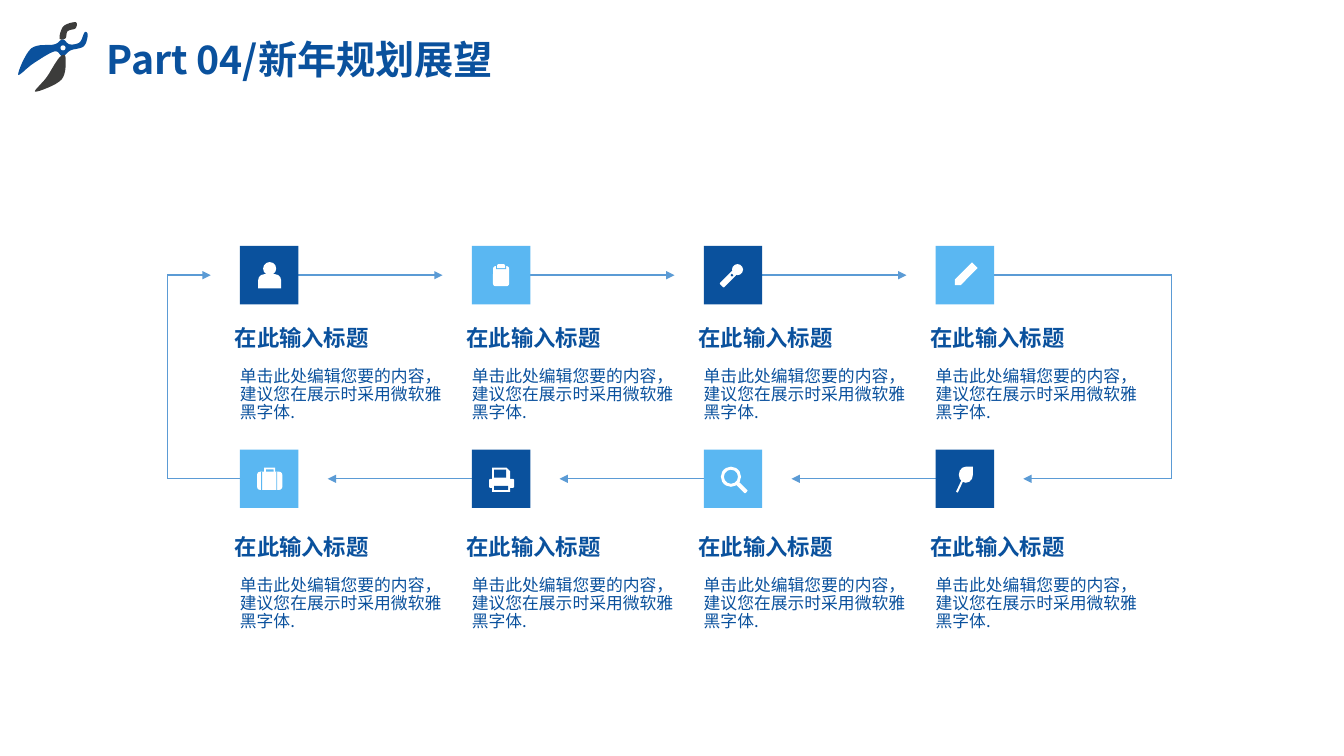
from lxml import etree
from pptx import Presentation, util as u
from pptx.dml.color import RGBColor
from pptx.enum import shapes, text
from pptx.oxml.ns import qn

# Content
TITLE = "Part 04/新年规划展望"
HEADING = "在此输入标题"
BODY = "单击此处编辑您要的内容，建议您在展示时采用微软雅黑字体."
FONT = "Noto Sans CJK SC"
COLORS = {"navy": "0A519D", "sky": "5AB7F2", "line": "5B9BD5",
          "white": "FFFFFF", "dark": "3C3C3B"}
ROWS = [["person", "clipboard", "torch", "pencil"],
        ["suitcase", "printer", "magnifier", "feather"]]

# Icon parts: preset, box in 1/100 inch from the tile corner, rotation;
# a part named "cut" takes the colour of the tile
KINDS = shapes.MSO_SHAPE
KIND = {"oval": KINDS.OVAL, "round": KINDS.ROUNDED_RECTANGLE, "rect": KINDS.RECTANGLE,
        "cut": KINDS.RECTANGLE, "body": KINDS.ROUND_2_SAME_RECTANGLE,
        "pen": KINDS.PENTAGON, "ring": KINDS.DONUT, "frame": KINDS.FRAME,
        "page": KINDS.SNIP_1_RECTANGLE, "leaf": KINDS.TEAR}
ADJUST = {"body": 0.45, "ring": 0.15, "frame": 0.2, "page": 0.3}
ICONS = {
    "person": [("oval", (23, 16, 13, 13), 0), ("body", (18, 28, 23, 14), 0)],
    "clipboard": [("round", (21, 20, 16, 20), 0), ("cut", (24, 20, 10, 3), 0),
                  ("body", (25, 18, 8, 4), 0)],
    "torch": [("round", (15, 30, 18, 6), 135), ("oval", (28, 18, 11, 11), 0),
              ("cut", (27, 28, 2, 2), 45)],
    "pencil": [("pen", (15, 25, 28, 8), 135)],
    "suitcase": [("frame", (24, 18, 11, 8), 0), ("round", (17, 22, 25, 18), 0),
                 ("cut", (21, 22, 1, 18), 0), ("cut", (36, 22, 1, 18), 0)],
    "printer": [("page", (20, 18, 18, 12), 0), ("cut", (22, 20, 12, 8), 0),
                ("round", (17, 29, 25, 9), 0), ("rect", (20, 35, 18, 7), 0),
                ("cut", (22, 36, 14, 4), 0)],
    "magnifier": [("ring", (17, 17, 20, 20), 0), ("round", (32, 36, 12, 4), 45)],
    "feather": [("leaf", (23, 17, 14, 16), 0), ("rect", (17, 35, 14, 2), 115)],
}

# Pliers: closed smooth outlines through a few points, 1/100 inch on the slide
PLIERS = [
    ("navy", [(84, 32), (79, 42), (69, 44), (62, 39), (54, 44), (31, 48), (18, 74),
              (33, 63), (54, 51), (62, 56), (70, 50), (83, 46), (87, 35)]),
    ("dark", [(59, 38), (63, 26), (75, 22), (75, 28), (67, 31), (65, 38)]),
    ("dark", [(65, 57), (59, 57), (46, 77), (35, 91), (61, 79)]),
]

# Grid, in inches
X0, PITCH, TILE = 2.38, 2.3, 0.58
TILE_TOPS, HEADING_TOPS, BODY_TOPS = (2.44, 4.46), (3.2, 5.27), (3.65, 5.72)
LEFT, RIGHT = 1.66, 11.62
GAP = 0.29  # between an arrowhead and the next tile

prs = Presentation()
prs.slide_width, prs.slide_height = u.Inches(13.33), u.Inches(7.5)
s = prs.slides.add_slide(prs.slide_layouts[6])


def rgb(name):
    return RGBColor.from_string(COLORS[name])


def paint(sp, color):
    sp.shadow.inherit = False
    sp.fill.solid()
    sp.fill.fore_color.rgb = rgb(color)
    sp.line.fill.background()


def add_preset(kind, color, box, rotation=0):
    sp = s.shapes.add_shape(KIND[kind], *map(u.Inches, box))
    sp.rotation = rotation
    if kind in ADJUST:
        sp.adjustments[0] = ADJUST[kind]
    paint(sp, color)


def smooth(points, steps=8):
    """Closed Catmull-Rom curve through the points."""
    curve = []
    for i in range(len(points)):
        a, b, c, d = (points[(i + k) % len(points)] for k in range(-1, 3))
        for t in (k / steps for k in range(steps)):
            curve.append([q + t * (r - p) / 2 + t * t * (p - 2.5 * q + 2 * r - v / 2)
                          + t ** 3 * (3 * (q - r) + v - p) / 2
                          for p, q, r, v in zip(a, b, c, d)])
    return curve


def add_outline(points, color):
    placed = [(x * 10, y * 10) for x, y in smooth(points)]
    fb = s.shapes.build_freeform(*placed[0], scale=u.Inches(1) / 1000)
    fb.add_line_segments(placed[1:], close=True)
    paint(fb.convert_to_shape(), color)


def add_line(x1, y1, x2, y2, arrow=False):
    c = s.shapes.add_connector(shapes.MSO_CONNECTOR.STRAIGHT,
                               *map(u.Inches, (x1, y1, x2, y2)))
    c.line.color.rgb, c.line.width = rgb("line"), u.Pt(1)
    sp_pr = c._element.spPr
    if arrow:
        etree.SubElement(sp_pr.find(qn("a:ln")), qn("a:tailEnd"), type="triangle")
    etree.SubElement(sp_pr, qn("a:effectLst"))


def add_text(words, box, size, bold=False, inset=None, grow=False, anchor="TOP",
             align="LEFT", spacing=None, before=None):
    tf = s.shapes.add_textbox(*map(u.Inches, box)).text_frame
    tf.word_wrap = True
    tf.vertical_anchor = text.MSO_ANCHOR[anchor]
    tf.auto_size = text.MSO_AUTO_SIZE["SHAPE_TO_FIT_TEXT" if grow else "NONE"]
    if inset is not None:
        tf.margin_left = tf.margin_right = tf.margin_top = tf.margin_bottom = u.Inches(inset)
    p = tf.paragraphs[0]
    p.alignment, p.line_spacing = text.PP_ALIGN[align], spacing
    if before:
        p.space_before = u.Pt(before)
    r = p.add_run()
    r.text = words
    r.font.size, r.font.bold, r.font.name = u.Pt(size), bold, FONT
    r.font.color.rgb = rgb("navy")
    etree.SubElement(r._r.get_or_add_rPr(), qn("a:ea"), typeface=FONT)


# Arrows between tiles, then the two sides of the loop
top, bottom = (t + TILE / 2 for t in TILE_TOPS)
columns = [X0 + i * PITCH for i in range(4)]
for x, following in zip(columns, columns[1:]):
    add_line(x + TILE, top, following - GAP, top, arrow=True)
    add_line(following, bottom, x + TILE + GAP, bottom, arrow=True)
add_line(columns[-1] + TILE, top, RIGHT, top)
add_line(RIGHT, top, RIGHT, bottom)
add_line(RIGHT, bottom, columns[-1] + TILE + GAP, bottom, arrow=True)
add_line(X0, bottom, LEFT, bottom)
add_line(LEFT, bottom, LEFT, top)
add_line(LEFT, top, X0 - GAP, top, arrow=True)

# Tiles with icon, heading and body
for row, names in enumerate(ROWS):
    for col, (x, name) in enumerate(zip(columns, names)):
        y = TILE_TOPS[row]
        tile_color = ("navy", "sky")[(row + col) % 2]
        add_preset("rect", tile_color, (x, y, TILE, TILE))
        for kind, (left, down, w, h), rotation in ICONS[name]:
            add_preset(kind, tile_color if kind == "cut" else "white",
                       (x + left / 100, y + down / 100, w / 100, h / 100), rotation)
        add_text(BODY, (x, BODY_TOPS[row], 2.13, 0.55), 12, inset=0, grow=True,
                 spacing=0.9, before=10)
        add_text(HEADING, (x - 0.15, HEADING_TOPS[row], 1.6, 0.34), 16, bold=True,
                 anchor="MIDDLE", spacing=0.9, before=10)

# Title and pliers
add_text(TITLE, (0.96, 0.3, 4.13, 0.57), 28, bold=True, grow=True, align="JUSTIFY")
for color, points in PLIERS:
    add_outline(points, color)
add_preset("oval", "white", (0.6, 0.45, 0.05, 0.05))

prs.save("out.pptx")
